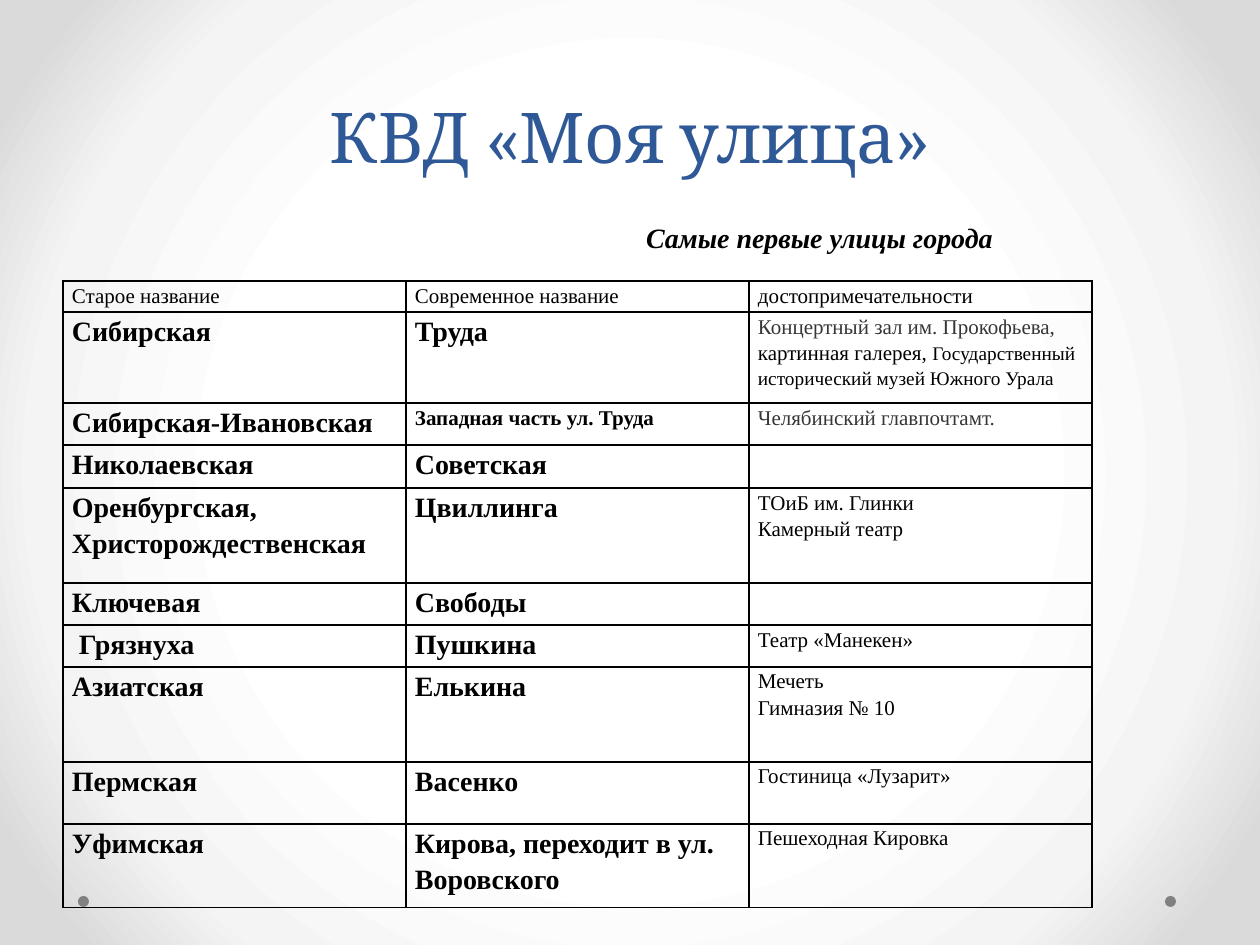
from lxml import etree
from pptx import Presentation, util as u
from pptx.dml.color import RGBColor
from pptx.enum import shapes, text
from pptx.oxml import parse_xml

PX = 914400 // 126
NAMESPACE = 'xmlns:a="http://schemas.openxmlformats.org/drawingml/2006/main"'
BLACK, GREY = "000000", "363636"


def px(*lengths):
    return [u.Emu(length * 914400 // 126) for length in lengths]


def write(paragraph, words, size=12, color=BLACK, bold=False, italic=False,
          font="Times New Roman"):
    run = paragraph.add_run()
    run.text = words
    run.font.name, run.font.size = font, u.Pt(size)
    run.font.bold, run.font.italic = bold, italic
    run.font.color.rgb = RGBColor.from_string(color)


presentation = Presentation()
presentation.slide_width, presentation.slide_height = px(1260, 945)
slide = presentation.slides.add_slide(presentation.slide_layouts[5])

# Round gradient background
background = slide.background.fill
background.gradient()
stops = "".join(
    f'<a:gs pos="{percent * 1000}"><a:srgbClr val="{color}"/></a:gs>'
    for percent, color in ((50, "FFFFFF"), (76, "F4F4F4"), (92, "DADADA")))
gradient = slide.element.find(".//{*}bgPr/{*}gradFill")
gradient.getparent().replace(gradient, parse_xml(
    f'<a:gradFill {NAMESPACE} rotWithShape="1"><a:gsLst>{stops}</a:gsLst>'
    '<a:path path="circle"><a:fillToRect l="50000" t="50000" r="50000" b="50000"/>'
    '</a:path></a:gradFill>'))

# Corner dots
for left in (1165, 78):
    dot = slide.shapes.add_shape(shapes.MSO_SHAPE.OVAL, *px(left, 896, 11, 11))
    dot.shadow.inherit = False
    dot.fill.solid()
    dot.fill.fore_color.rgb = RGBColor.from_string("808080")
    dot.line.fill.background()

# Title
title = slide.shapes.title
title.left, title.top, title.width, title.height = px(63, 55, 1134, 129)
title.text_frame.vertical_anchor = text.MSO_ANCHOR.BOTTOM
paragraph = title.text_frame.paragraphs[0]
paragraph.alignment = text.PP_ALIGN.CENTER
paragraph.line_spacing = u.Pt(58)
write(paragraph, "КВД «Моя улица»", size=40, color="2F5897", font="Cambria")

# Each cell is a list of paragraphs, each paragraph a list of (words, format)
BIG = {"size": 16, "bold": True}
ROWS = [
    (31, [[("Старое название", {})]], [[("Современное название", {})]],
     [[("достопримечательности", {})]]),
    (91, [[("Сибирская", BIG)]], [[("Труда", BIG)]],
     [[("Концертный зал им. Прокофьева, ", {"color": GREY}),
       ("картинная галерея, ", {}),
       ("Государственный исторический музей Южного Урала", {"size": 11})]]),
    (42, [[("Сибирская-Ивановская", BIG)]],
     [[("Западная часть ул. Труда", {"bold": True})]],
     [[("Челябинский главпочтамт.", {"color": GREY})]]),
    (43, [[("Николаевская", BIG)]], [[("Советская", BIG)]], []),
    (95, [[("Оренбургская, Христорождественская", BIG)]], [[("Цвиллинга", BIG)]],
     [[("ТОиБ им. Глинки", {})], [("Камерный театр", {})]]),
    (42, [[("Ключевая", BIG)]], [[("Свободы", BIG)]], []),
    (42, [[(" Грязнуха", BIG)]], [[("Пушкина", BIG)]],
     [[("Театр «Манекен»", {})]]),
    (95, [[("Азиатская", BIG)]], [[("Елькина", BIG)]],
     [[("Мечеть", {})], [("Гимназия № 10", {})]]),
    (62, [[("Пермская", BIG)]], [[("Васенко", BIG)]],
     [[("Гостиница «Лузарит»", {})]]),
    (84, [[("Уфимская", BIG)]], [[("Кирова, переходит в ул. Воровского", BIG)]],
     [[("Пешеходная Кировка", {})]]),
]
table_height = sum(row[0] for row in ROWS)
table = slide.shapes.add_table(len(ROWS), 3, *px(63, 281, 1029, table_height)).table
table.first_row = table.horz_banding = False
for column in table.columns:
    column.width, = px(343)

for row_index, (height, *cells) in enumerate(ROWS):
    table.rows[row_index].height, = px(height)
    for column_index, paragraphs in enumerate(cells):
        cell = table.cell(row_index, column_index)
        cell.margin_left, cell.margin_right = px(9, 9)
        cell.margin_top = cell.margin_bottom = 0
        frame = cell.text_frame
        frame.paragraphs[0].font.size = u.Pt(12)
        for index, runs in enumerate(paragraphs):
            paragraph = frame.add_paragraph() if index else frame.paragraphs[0]
            paragraph.line_spacing = 1.15
            for words, style in runs:
                write(paragraph, words, **style)
        properties = cell._tc.get_or_add_tcPr()
        for side in ("lnL", "lnR", "lnT", "lnB"):
            properties.append(etree.fromstring(
                f'<a:{side} {NAMESPACE} w="12700"><a:solidFill>'
                f'<a:srgbClr val="{BLACK}"/></a:solidFill></a:{side}>'))
        cell.fill.background()

# Table heading
heading = slide.shapes.add_textbox(*px(571, 213, 752 - 63, 84))
frame = heading.text_frame
frame.word_wrap = True
frame.margin_left, frame.margin_top = px(75, 8)
write(frame.paragraphs[0], "Самые первые улицы города", size=16, bold=True, italic=True)

presentation.save("out.pptx")
